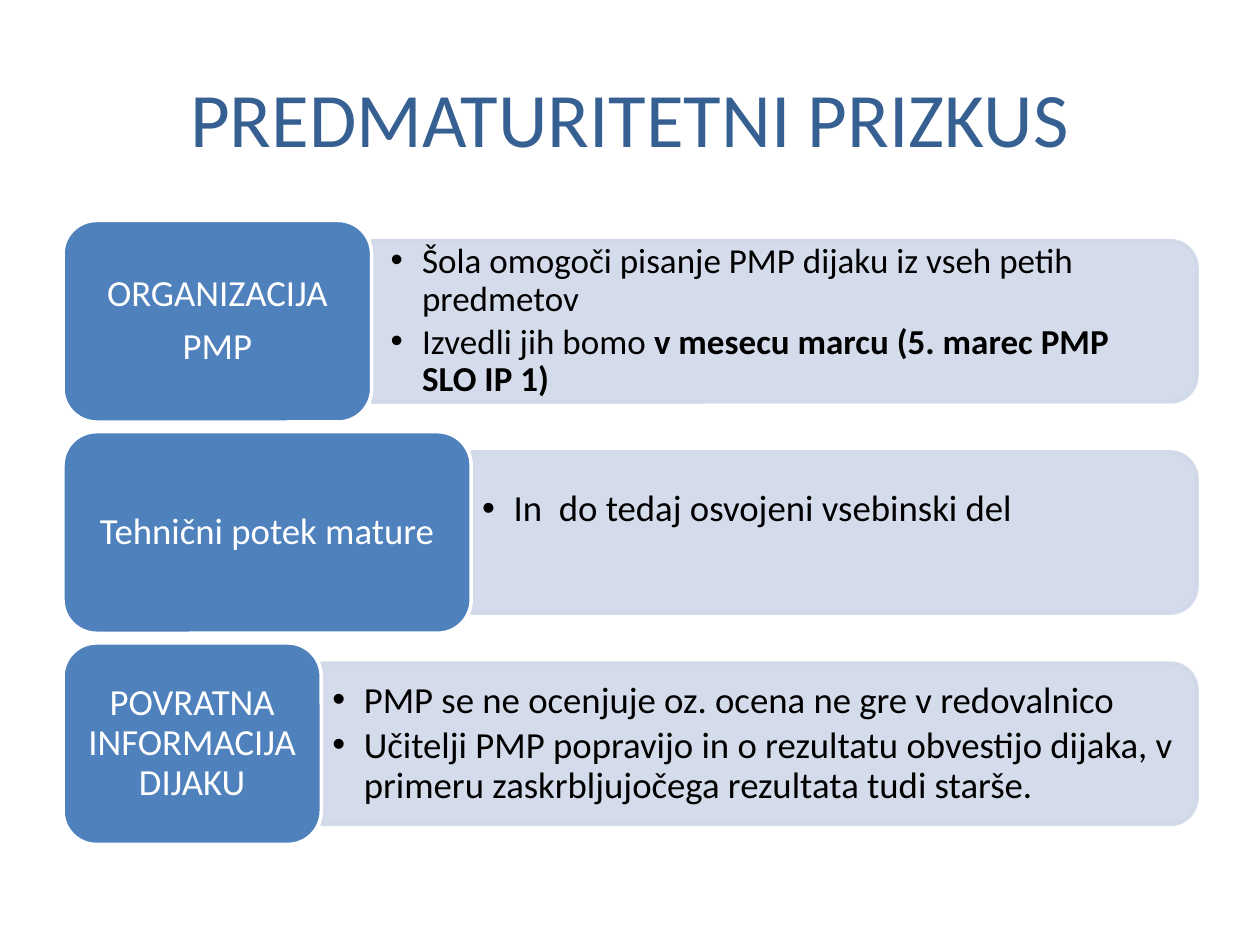
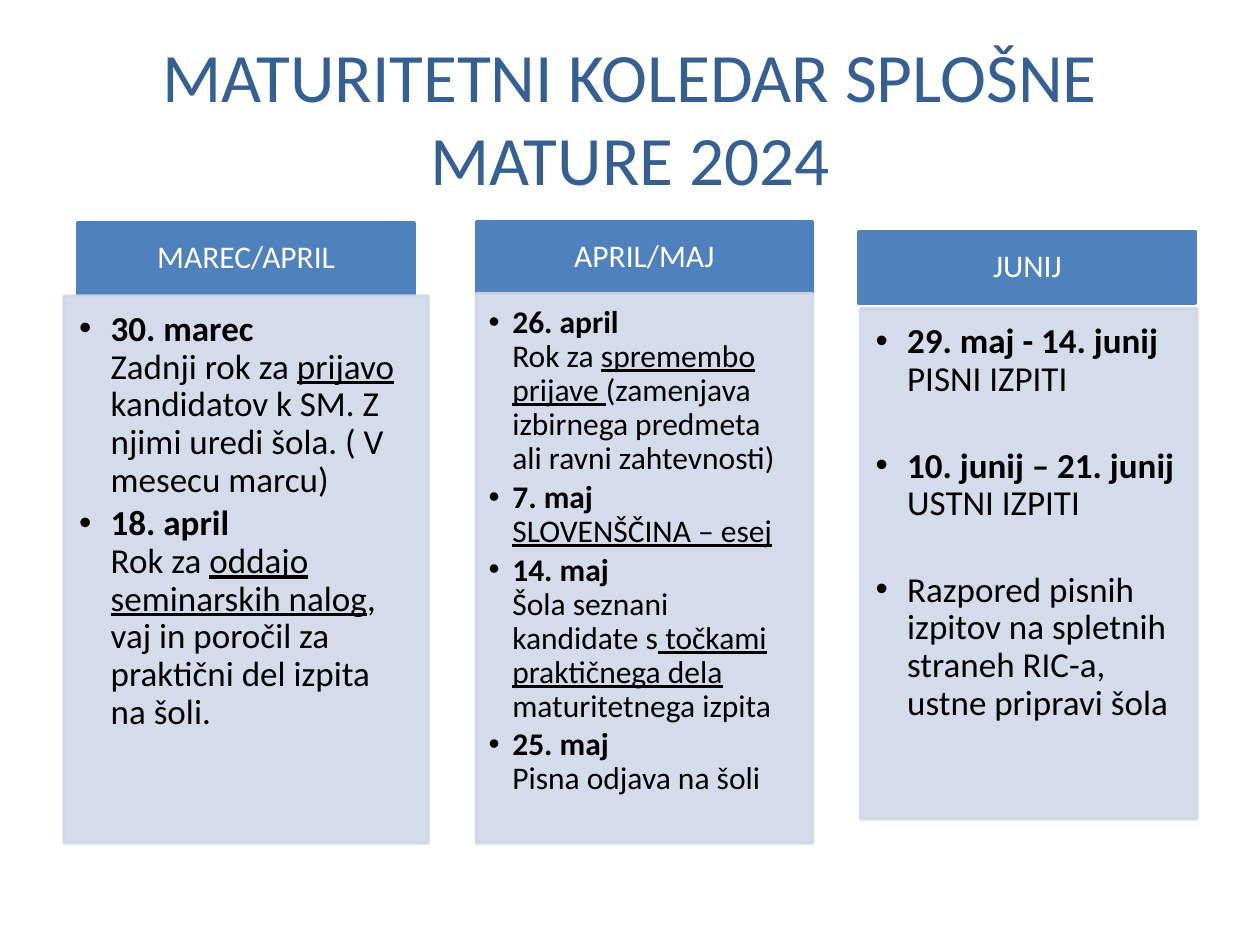
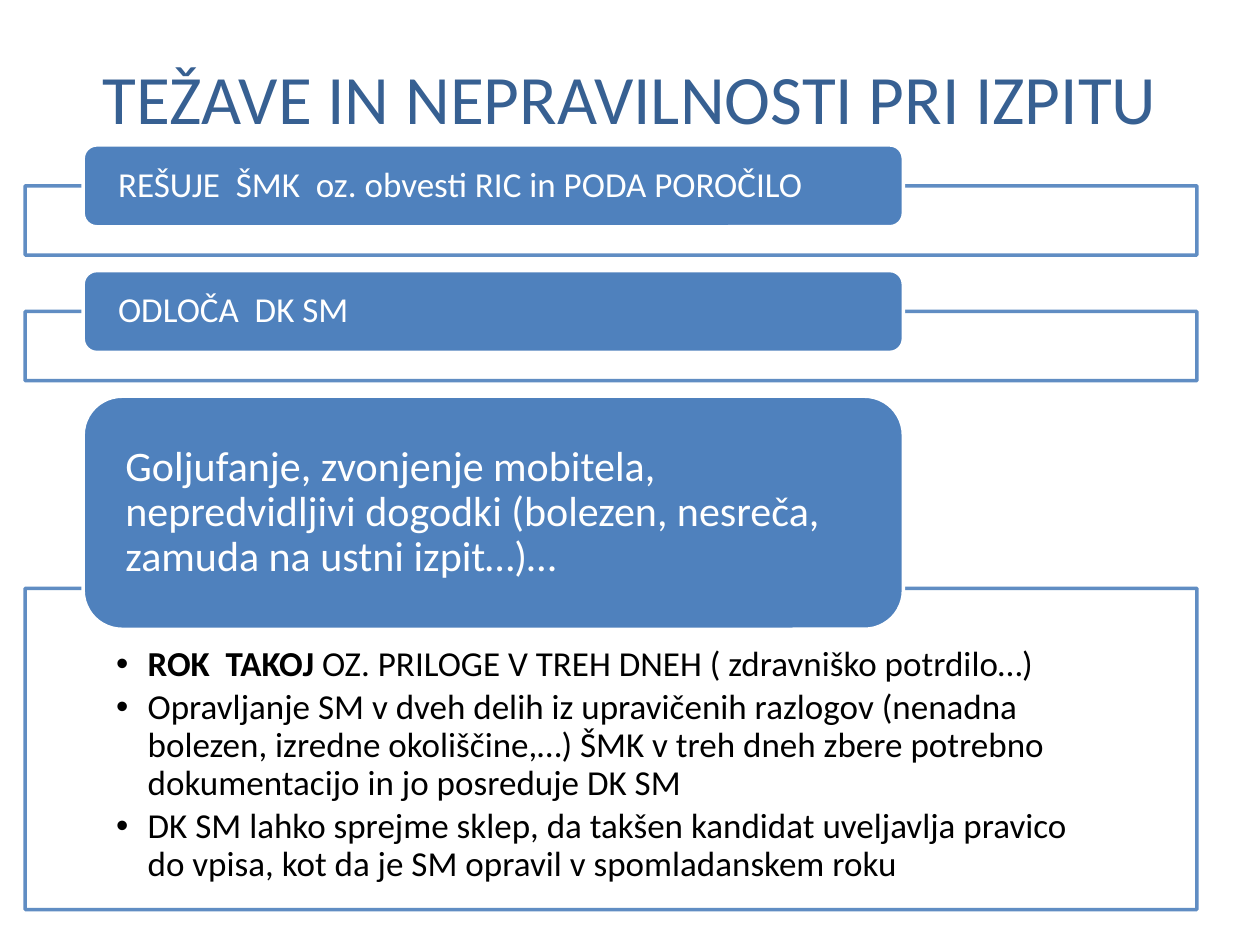
import dataclasses

import lxml.etree
import pptx
import pptx.dml.color
import pptx.enum.shapes
import pptx.enum.text
import pptx.oxml.ns
import pptx.util

Pt = pptx.util.Pt
Kind = pptx.enum.shapes.MSO_SHAPE
Align = pptx.enum.text.PP_ALIGN
Anchor = pptx.enum.text.MSO_ANCHOR

FONT = "Calibri"
TITLE, BLUE, PALE, WHITE, BLACK = "376092", "4F81BD", "D0D8E8", "FFFFFF", "000000"
RIGHT = 684


@dataclasses.dataclass(frozen=True)
class Box:
    left: float
    top: float
    width: float
    height: float


@dataclasses.dataclass(frozen=True)
class Style:
    size: float
    color: str
    pad: tuple[float, float, float, float]
    align: Align = Align.LEFT
    anchor: Anchor = Anchor.MIDDLE
    hang: float = 0
    after: float = 0.35
    gap: float = 0


@dataclasses.dataclass(frozen=True)
class Row:
    width: float
    label: list[str]
    points: list[str]
    size: float
    pad: tuple[float, float, float, float]


@dataclasses.dataclass(frozen=True)
class Column:
    head: Box
    body: Box
    label: str
    points: list[str]
    size: float
    hang: float
    pad: tuple[float, float, float, float]
    gap: float = 0


@dataclasses.dataclass(frozen=True)
class Step:
    label: str
    size: float
    pill: float
    frame: float
    points: list[str]


def rgb(color: str) -> pptx.dml.color.RGBColor:
    return pptx.dml.color.RGBColor.from_string(color)


def fade(shape) -> None:
    for tint in shape.element.spPr.iter(pptx.oxml.ns.qn("a:srgbClr")):
        lxml.etree.SubElement(tint, pptx.oxml.ns.qn("a:alpha"), val="90000")


def draw(slide, kind: Kind, box: Box, fill: str, line: str):
    shape = slide.shapes.add_shape(
        kind, Pt(box.left), Pt(box.top), Pt(box.width), Pt(box.height))
    shape.shadow.inherit = False
    shape.fill.solid()
    shape.fill.fore_color.rgb = rgb(fill)
    shape.line.color.rgb = rgb(line)
    shape.line.width = Pt(2)
    return shape


def set_font(font, size: float, color: str) -> None:
    font.name = FONT
    font.size = Pt(size)
    font.color.rgb = rgb(color)


def add_runs(para, text: str, style: Style) -> None:
    """Asterisks enclose bold text and underscores enclose underlined text."""
    for i, part in enumerate(text.split("*")):
        for j, piece in enumerate(part.split("_")):
            if not piece:
                continue
            run = para.add_run()
            run.text = piece.rstrip("\v")
            set_font(run.font, style.size, style.color)
            run.font.bold = i % 2 == 1
            run.font.underline = j % 2 == 1
            if piece.endswith("\v"):
                para.add_line_break()


def add_bullet(para, hang: float) -> None:
    props = para._p.get_or_add_pPr()
    props.set("marL", str(Pt(hang)))
    props.set("indent", str(-Pt(hang)))
    lxml.etree.SubElement(props, pptx.oxml.ns.qn("a:buFont"), typeface="Arial")
    lxml.etree.SubElement(props, pptx.oxml.ns.qn("a:buChar"), char="•")


def write(shape, lines: list[str], style: Style) -> None:
    frame = shape.text_frame
    frame.word_wrap = True
    frame.vertical_anchor = style.anchor
    (frame.margin_left, frame.margin_top,
     frame.margin_right, frame.margin_bottom) = map(Pt, style.pad)
    for i, line in enumerate(lines):
        para = frame.add_paragraph() if i else frame.paragraphs[0]
        para.alignment = style.align
        para.line_spacing = 0.9
        para.space_after = Pt(style.size * style.after + style.gap)
        if style.hang:
            add_bullet(para, style.hang)
        add_runs(para, line, style)


def add_slide(deck, title: str, size: float, height: float = 90):
    slide = deck.slides.add_slide(deck.slide_layouts[5])
    shape = slide.shapes.title
    shape.left, shape.top, shape.width, shape.height = map(Pt, (36, 21.6, 648, height))
    frame = shape.text_frame
    frame.text = title
    frame.auto_size = pptx.enum.text.MSO_AUTO_SIZE.NONE
    frame.vertical_anchor = Anchor.MIDDLE
    para = frame.paragraphs[0]
    para.alignment = Align.CENTER
    set_font(para.runs[0].font, size, TITLE)
    return slide


def draw_row(slide, row: Row, top: float) -> None:
    left, high, bar_high, text_high = 36, 115.2, 92.2, 83
    edge, mid = left + row.width, top + high / 2
    long = RIGHT - edge
    bar = draw(slide, Kind.ROUND_2_SAME_RECTANGLE,
               Box(edge + (long - bar_high) / 2, mid - long / 2, bar_high, long),
               PALE, PALE)
    bar.rotation = 90
    fade(bar)
    note = slide.shapes.add_textbox(
        Pt(edge), Pt(mid - text_high / 2), Pt(long - 4.3), Pt(text_high))
    write(note, row.points, Style(row.size, BLACK, row.pad, hang=18, after=0.15))
    tile = draw(slide, Kind.ROUNDED_RECTANGLE,
                Box(left, top, row.width, high), BLUE, WHITE)
    write(tile, row.label, Style(21, WHITE, (6.3, 3, 6.3, 3), Align.CENTER))


def draw_column(slide, col: Column) -> None:
    head = draw(slide, Kind.RECTANGLE, col.head, BLUE, BLUE)
    write(head, [col.label], Style(18, WHITE, (10, 5.8, 10, 5.8), Align.CENTER))
    body = draw(slide, Kind.RECTANGLE, col.body, PALE, PALE)
    fade(body)
    write(body, col.points, Style(col.size, BLACK, col.pad, anchor=Anchor.TOP,
                                  hang=col.hang, after=0.15, gap=col.gap))


def draw_step(slide, step: Step, top: float) -> float:
    start = top + step.pill - 23.4
    frame = draw(slide, Kind.RECTANGLE,
                 Box(14.4, start, RIGHT - 14.4, step.frame), WHITE, BLUE)
    fade(frame)
    if step.points:
        write(frame, step.points, Style(20, BLACK, (52, 33.3, 52, 11.5),
                                        anchor=Anchor.TOP, hang=18, after=0.15))
    pill = draw(slide, Kind.ROUNDED_RECTANGLE,
                Box(47.5, top, 468.7, step.pill), BLUE, WHITE)
    write(pill, [step.label], Style(step.size, WHITE, (17.7, 0, 17.7, 0)))
    return start + step.frame + 8.8


ROWS = [
    Row(176.4, ["ORGANIZACIJA", "PMP"],
        ["Šola omogoči pisanje PMP dijaku iz vseh petih predmetov",
         "Izvedli jih bomo *v mesecu marcu (5. marec PMP SLO IP 1)*"],
        20, (10.8, 5, 10.8, 5)),
    Row(233.3, ["Tehnični potek mature"],
        ["In  do tedaj osvojeni vsebinski del"], 21, (6.3, 3, 6.3, 29)),
    Row(147.6, ["POVRATNA INFORMACIJA DIJAKU"],
        ["PMP se ne ocenjuje oz. ocena ne gre v redovalnico",
         "Učitelji PMP popravijo in o rezultatu obvestijo dijaka, v primeru "
         "zaskrbljujočega rezultata tudi starše."], 21, (6.3, 3, 6.3, 3)),
]

WIDE = (8.6, 8.6, 11.5, 12.2)
COLUMNS = [
    Column(Box(44.6, 127.4, 192.2, 41), Box(36.7, 169.2, 208, 312.5), "MAREC/APRIL",
           ["*30. marec\v*Zadnji rok za _prijavo_ kandidatov k SM. Z njimi uredi "
            "šola. ( V mesecu marcu)",
            "*18. april\v*Rok za _oddajo seminarskih nalog_, vaj in poročil za "
            "praktični del izpita na šoli."], 20, 18, WIDE),
    Column(Box(272.2, 126.7, 192.2, 41), Box(272.2, 167.8, 192.2, 313.9), "APRIL/MAJ",
           ["*26. april\v*Rok za _spremembo prijave _(zamenjava izbirnega predmeta "
            "ali ravni zahtevnosti)",
            "*7. maj\v*_SLOVENŠČINA – esej_",
            "*14. maj\v*Šola seznani kandidate s_ točkami praktičnega dela _"
            "maturitetnega izpita",
            "*25. maj\v*Pisna odjava na šoli"], 18, 13.5, (7.2, 7.2, 10, 11.5)),
    Column(Box(491, 132.5, 192.2, 41), Box(491.8, 176.4, 192.2, 291.6), "JUNIJ",
           ["*29. maj - 14. junij *PISNI IZPITI",
            "*10. junij – 21. junij *USTNI IZPITI",
            "Razpored pisnih izpitov na spletnih straneh RIC-a, ustne pripravi šola"],
           20, 18, WIDE, 24.7),
]

STEPS = [
    Step("REŠUJE  ŠMK  oz. obvesti RIC in PODA POROČILO", 20, 46.8, 39.6, []),
    Step("ODLOČA  DK SM", 20, 46.8, 39.6, []),
    Step("Goljufanje, zvonjenje mobitela, nepredvidljivi dogodki (bolezen, nesreča, "
         "zamuda na ustni izpit…)…", 24, 133.2, 183.6,
         ["*ROK  TAKOJ *OZ. PRILOGE V TREH DNEH ( zdravniško potrdilo…)",
          "Opravljanje SM v dveh delih iz upravičenih razlogov (nenadna bolezen, "
          "izredne okoliščine,…) ŠMK v treh dneh zbere potrebno dokumentacijo in jo "
          "posreduje DK SM",
          "DK SM lahko sprejme sklep, da takšen kandidat uveljavlja pravico do vpisa, "
          "kot da je SM opravil v spomladanskem roku"]),
]


def main() -> None:
    deck = pptx.Presentation()
    deck.slide_width, deck.slide_height = Pt(720), Pt(540)

    slide = add_slide(deck, "PREDMATURITETNI PRIZKUS", 44)
    for i, row in enumerate(ROWS):
        draw_row(slide, row, 126 + i * 120.7)

    slide = add_slide(deck, "MATURITETNI KOLEDAR SPLOŠNE MATURE 2024", 39.6)
    for col in COLUMNS:
        draw_column(slide, col)

    slide = add_slide(deck, "TEŽAVE IN NEPRAVILNOSTI PRI IZPITU", 39.6, 67)
    top = 82.8
    for step in STEPS:
        top = draw_step(slide, step, top)

    deck.save("out.pptx")


if __name__ == "__main__":
    main()
